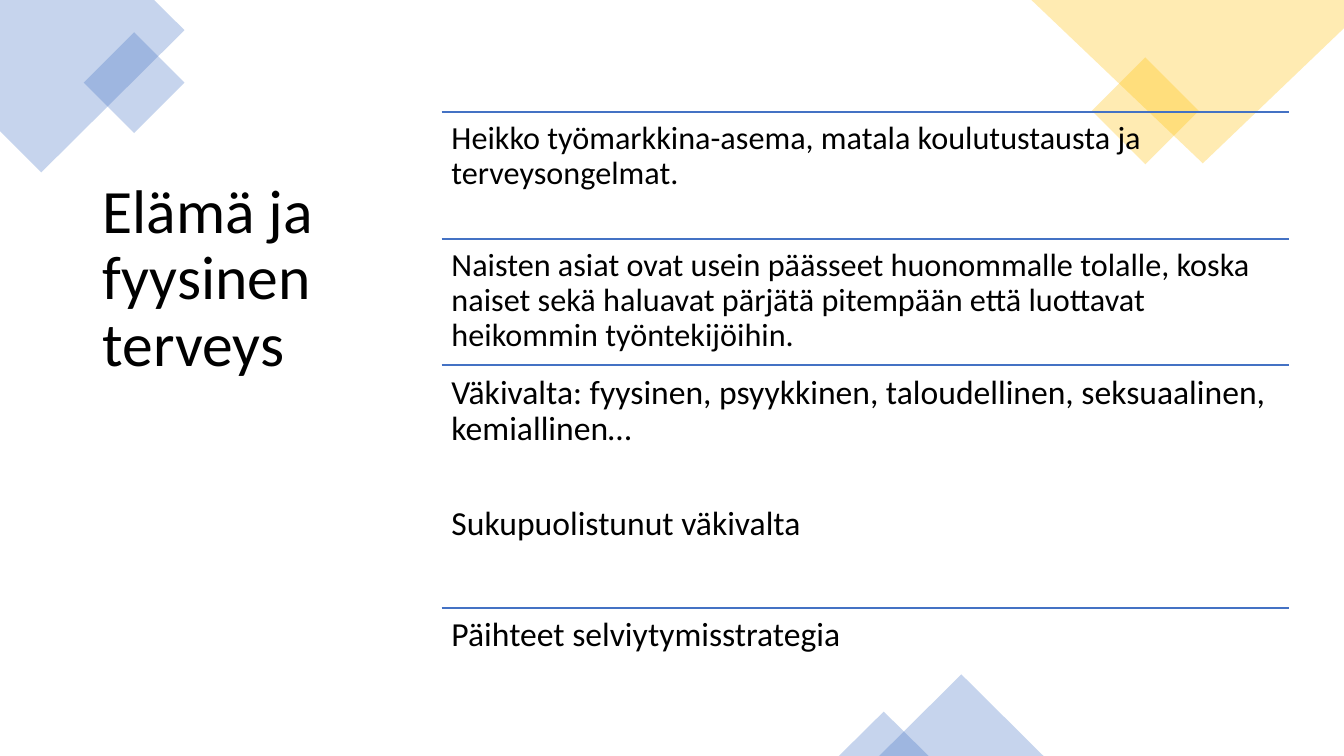
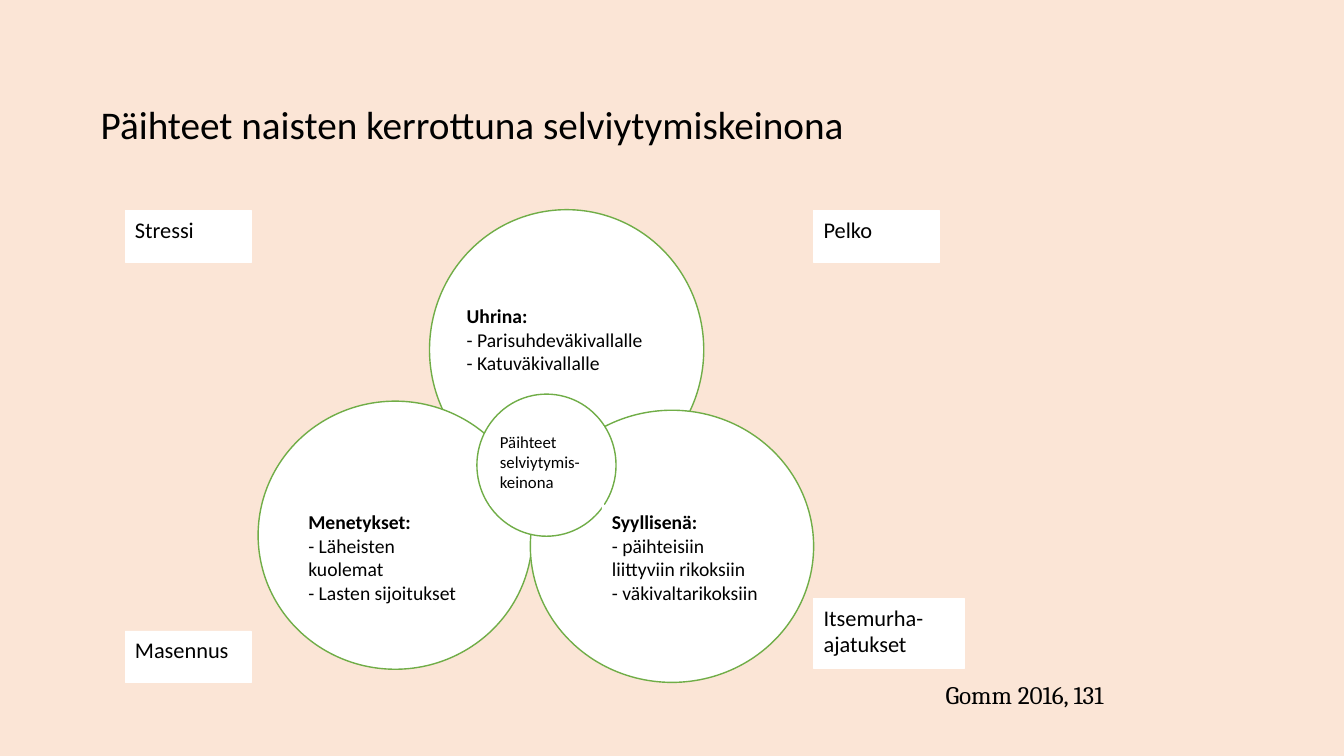
from dataclasses import dataclass

from lxml.etree import SubElement
from pptx import Presentation
from pptx.dml.color import RGBColor
from pptx.enum.shapes import MSO_CONNECTOR, MSO_SHAPE
from pptx.enum.text import MSO_ANCHOR, PP_ALIGN
from pptx.oxml.ns import qn
from pptx.shapes.autoshape import Shape
from pptx.slide import Slide
from pptx.text.text import TextFrame
from pptx.util import Inches, Pt

BLACK = RGBColor(0x00, 0x00, 0x00)
WHITE = RGBColor(0xFF, 0xFF, 0xFF)
BLUE = RGBColor(0x44, 0x72, 0xC4)
GOLD = RGBColor(0xFF, 0xC0, 0x00)
GREEN = RGBColor(0x70, 0xAD, 0x47)
PEACH = RGBColor(0xFB, 0xE5, 0xD6)

BODY_FONT = "Calibri"
SOURCE_FONT = "Cambria"
DECOR_OPACITY = 30
TIGHT_SPACING = 0.9


@dataclass(frozen=True)
class Box:
    left: float
    top: float
    width: float
    height: float

    def inches(self) -> tuple[Inches, Inches, Inches, Inches]:
        return Inches(self.left), Inches(self.top), Inches(self.width), Inches(self.height)


@dataclass(frozen=True)
class Ornament:
    preset: MSO_SHAPE
    box: Box
    color: RGBColor


@dataclass(frozen=True)
class Corner:
    points: tuple[tuple[float, float], ...]
    color: RGBColor


@dataclass(frozen=True)
class Row:
    text: str
    height: float
    size: int
    gap_after: int = 8


@dataclass(frozen=True)
class Label:
    text: str
    box: Box
    size: int
    has_heading: bool = False


CORNERS = (
    Corner(((0, 0), (1.53, 0), (1.83, 0.3), (0.41, 1.71), (0, 1.3)), BLUE),
    Corner(((10.23, 0), (13.33, 0), (13.33, 0.28), (11.93, 1.62)), GOLD),
)
ORNAMENTS = (
    Ornament(MSO_SHAPE.DIAMOND, Box(0.83, 0.32, 1, 1), BLUE),
    Ornament(MSO_SHAPE.DIAMOND, Box(10.83, 0.57, 1.06, 1.06), GOLD),
    Ornament(MSO_SHAPE.ISOSCELES_TRIANGLE, Box(8.72, 6.69, 1.63, 0.81), BLUE),
    Ornament(MSO_SHAPE.ISOSCELES_TRIANGLE, Box(8.32, 7.06, 0.89, 0.44), BLUE),
)

ROWS_LEFT, ROWS_TOP, ROWS_WIDTH = 4.38, 1.11, 8.4
ROWS = (
    Row("Heikko työmarkkina-asema, matala koulutustausta ja terveysongelmat.", 1.26, 23),
    Row(
        "Naisten asiat ovat usein päässeet huonommalle tolalle, koska naiset sekä haluavat "
        "pärjätä pitempään että luottavat heikommin työntekijöihin.",
        1.25,
        23,
    ),
    Row(
        "Väkivalta: fyysinen, psyykkinen, taloudellinen, seksuaalinen, kemiallinen…\n"
        "Sukupuolistunut väkivalta",
        2.41,
        24,
        gap_after=42,
    ),
    Row("Päihteet selviytymisstrategia", 1.25, 24),
)

CIRCLES = (
    Box(4.26, 2.08, 2.72, 2.78),
    Box(2.56, 3.98, 2.72, 2.66),
    Box(5.26, 4.07, 2.81, 2.7),
    Box(4.73, 3.91, 1.38, 1.41),
)
LABELS = (
    Label("Päihteet selviytymis-keinona", Box(4.86, 4.23, 1.12, 0.78), 12),
    Label("Uhrina:\n- Parisuhdeväkivallalle\n- Katuväkivallalle", Box(4.53, 2.97, 1.99, 0.87), 14, True),
    Label("Menetykset:\n- Läheisten kuolemat\n- Lasten sijoitukset", Box(2.96, 5.01, 1.77, 1.09), 14, True),
    Label(
        "Syyllisenä:\n- päihteisiin liittyviin rikoksiin\n- väkivaltarikoksiin",
        Box(5.97, 5.01, 1.7, 1.05),
        14,
        True,
    ),
    Label("Stressi", Box(1.24, 2.09, 1.25, 0.51), 16),
    Label("Masennus", Box(1.24, 6.26, 1.25, 0.51), 16),
    Label("Itsemurha-ajatukset", Box(8.07, 5.94, 1.49, 0.69), 16),
    Label("Pelko", Box(8.07, 2.09, 1.25, 0.51), 16),
)


def write(frame: TextFrame, text: str, size: int, font: str = BODY_FONT, spacing: float = 1.0) -> None:
    """Fill a frame with left-aligned black text, one paragraph per line."""
    frame.text = text
    frame.word_wrap = True
    for paragraph in frame.paragraphs:
        paragraph.alignment = PP_ALIGN.LEFT
        paragraph.line_spacing = spacing
        for run in paragraph.runs:
            run.font.name = font
            run.font.size = Pt(size)
            run.font.color.rgb = BLACK


def add_title(slide: Slide, text: str, box: Box, size: int) -> None:
    frame = slide.shapes.add_textbox(*box.inches()).text_frame
    write(frame, text, size, spacing=TIGHT_SPACING)
    frame.vertical_anchor = MSO_ANCHOR.MIDDLE


def make_translucent(shape: Shape, color: RGBColor) -> None:
    shape.shadow.inherit = False
    shape.fill.solid()
    shape.fill.fore_color.rgb = color
    shape.line.fill.background()
    fill_color = shape.element.spPr.find(f"{qn('a:solidFill')}/{qn('a:srgbClr')}")
    SubElement(fill_color, qn("a:alpha")).set("val", str(DECOR_OPACITY * 1000))


def add_corner(slide: Slide, corner: Corner) -> None:
    start, *others = [(Inches(x), Inches(y)) for x, y in corner.points]
    outline = slide.shapes.build_freeform(*start)
    outline.add_line_segments(others, close=True)
    make_translucent(outline.convert_to_shape(), corner.color)


def add_ornament(slide: Slide, ornament: Ornament) -> None:
    shape = slide.shapes.add_shape(ornament.preset, *ornament.box.inches())
    make_translucent(shape, ornament.color)


def add_rule(slide: Slide, top: float) -> None:
    """Draw the thin line above a row."""
    rule = slide.shapes.add_connector(
        MSO_CONNECTOR.STRAIGHT,
        Inches(ROWS_LEFT), Inches(top), Inches(ROWS_LEFT + ROWS_WIDTH), Inches(top),
    )
    rule.line.color.rgb = BLUE
    rule.line.width = Pt(1)
    SubElement(rule.element.spPr, qn("a:effectLst"))


def add_row(slide: Slide, row: Row, top: float) -> None:
    add_rule(slide, top)
    box = Box(ROWS_LEFT, top, ROWS_WIDTH, row.height)
    frame = slide.shapes.add_textbox(*box.inches()).text_frame
    frame.margin_top = frame.margin_bottom = Inches(0.1)
    write(frame, row.text, row.size, spacing=TIGHT_SPACING)
    for paragraph in frame.paragraphs:
        paragraph.space_after = Pt(row.gap_after)


def add_white_shape(slide: Slide, preset: MSO_SHAPE, box: Box, line_color: RGBColor, line_width: float) -> Shape:
    shape = slide.shapes.add_shape(preset, *box.inches())
    shape.shadow.inherit = False
    shape.fill.solid()
    shape.fill.fore_color.rgb = WHITE
    shape.line.color.rgb = line_color
    shape.line.width = Pt(line_width)
    return shape


def add_label(slide: Slide, label: Label) -> None:
    frame = add_white_shape(slide, MSO_SHAPE.RECTANGLE, label.box, WHITE, 0.5).text_frame
    frame.vertical_anchor = MSO_ANCHOR.TOP
    write(frame, label.text, label.size)
    if label.has_heading:
        frame.paragraphs[0].runs[0].font.bold = True


def add_slide(deck: Presentation, background: RGBColor) -> Slide:
    slide = deck.slides.add_slide(deck.slide_layouts[6])
    slide.background.fill.solid()
    slide.background.fill.fore_color.rgb = background
    return slide


def build_health_slide(deck: Presentation) -> None:
    slide = add_slide(deck, WHITE)
    for corner in CORNERS:
        add_corner(slide, corner)
    for ornament in ORNAMENTS:
        add_ornament(slide, ornament)
    add_title(slide, "Elämä ja\nfyysinen\nterveys", Box(0.92, 0.4, 3.4, 4.75), 44)
    top = ROWS_TOP
    for row in ROWS:
        add_row(slide, row, top)
        top += row.height


def build_coping_slide(deck: Presentation) -> None:
    slide = add_slide(deck, PEACH)
    add_title(slide, "Päihteet naisten kerrottuna selviytymiskeinona", Box(0.9, 0.84, 9.02, 0.83), 28)
    citation = slide.shapes.add_textbox(*Box(9.28, 6.69, 3.14, 0.42).inches())
    write(citation.text_frame, "Gomm 2016, 131", 18, SOURCE_FONT)
    for circle in CIRCLES:
        add_white_shape(slide, MSO_SHAPE.OVAL, circle, GREEN, 1)
    for label in LABELS:
        add_label(slide, label)


def main() -> None:
    deck = Presentation()
    deck.slide_width = Inches(13.33)
    deck.slide_height = Inches(7.5)
    build_health_slide(deck)
    build_coping_slide(deck)
    deck.save("out.pptx")


if __name__ == "__main__":
    main()
